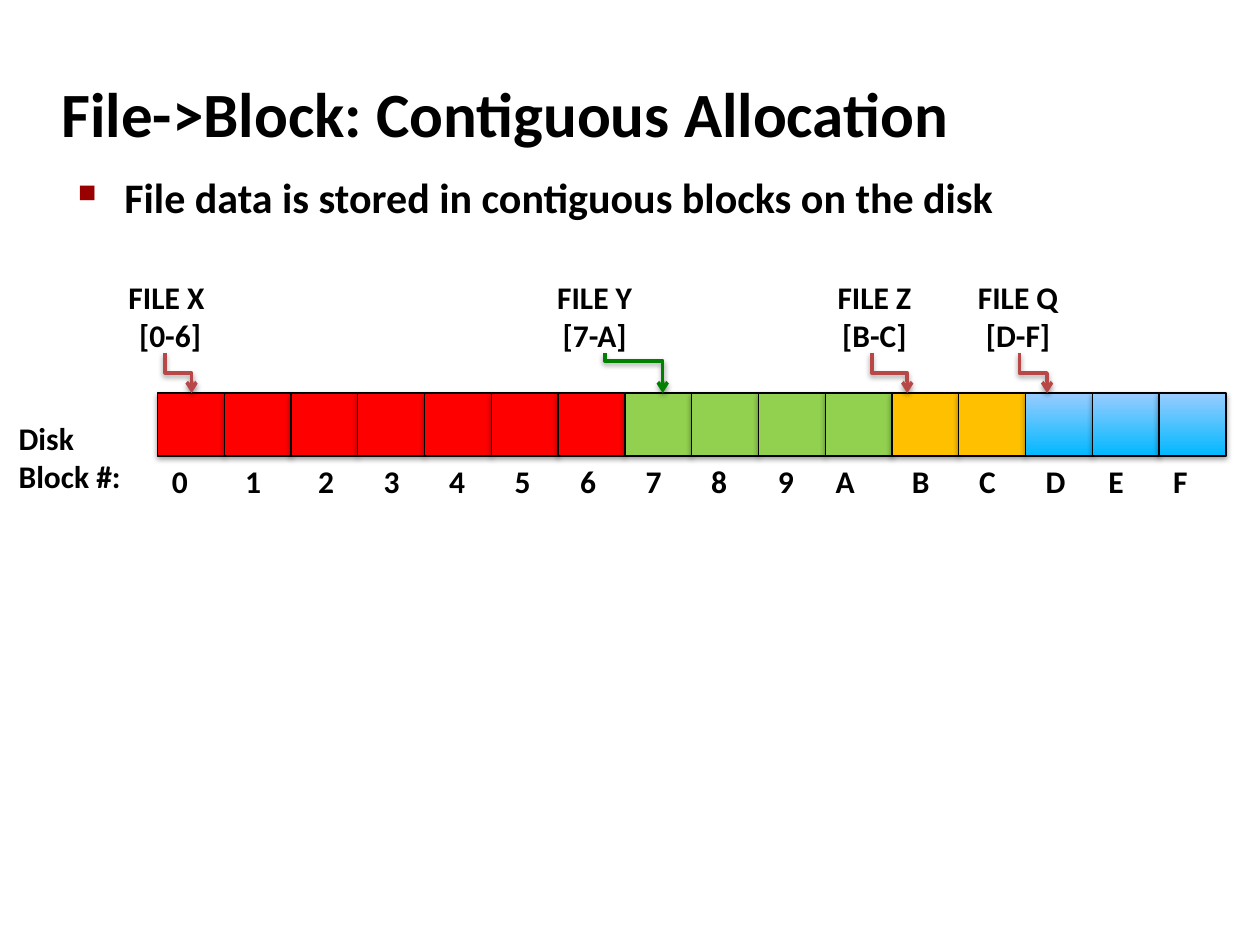
"""Build a slide that shows contiguous file allocation on disk blocks."""
from dataclasses import dataclass

from lxml.etree import SubElement
from pptx import Presentation
from pptx.dml.color import RGBColor as Color
from pptx.enum.shapes import MSO_CONNECTOR as Connector, MSO_SHAPE as Shape
from pptx.enum.text import MSO_ANCHOR as Anchor, PP_ALIGN as Align
from pptx.oxml.ns import qn
from pptx.util import Inches, Pt


@dataclass(frozen=True)
class Theme:
    font: str = "Calibri"
    title_size: float = 36
    body_size: float = 24
    label_size: float = 18
    ink: str = "000000"
    bullet: str = "990000"
    red_arrow: str = "B84747"
    green_arrow: str = "008000"
    red: str = "FF0000"
    green: str = "92D050"
    amber: str = "FFC000"
    blue: tuple[str, str] = ("00B8FF", "99CCFF")


@dataclass(frozen=True)
class Area:
    left: float
    top: float
    width: float
    height: float


@dataclass(frozen=True)
class DiskFile:
    lines: tuple[str, str]
    blocks: int
    fill: str | tuple[str, str]
    label_center: float
    arrow_start: float
    arrow_end: float
    arrow_color: str
    bend: float = 0.5


THEME = Theme()
ROW = Area(1.25, 3.12, 0.53, 0.5)
LABEL_TOP, LABEL_WIDTH, LABEL_HEIGHT = 2.16, 1.1, 0.7
ARROW_TOP = 2.8
NUMBERS = Area(1.16, 3.62, 8.47, 0.37)
NUMBER_CENTERS = (1.43, 2.01, 2.59, 3.11, 3.63, 4.15, 4.67, 5.19,
                  5.71, 6.24, 6.71, 7.31, 7.84, 8.38, 8.86, 9.37)
INSET = 0.1
FILES = (
    DiskFile(("FILE X ", "[0-6]"), 7, THEME.red, 1.35, 1.31, 1.52, THEME.red_arrow),
    DiskFile(("FILE Y", "[7-A]"), 4, THEME.green, 4.72, 4.8, 5.26, THEME.green_arrow, 0.2),
    DiskFile(("FILE Z", "[B-C]"), 2, THEME.amber, 6.94, 6.92, 7.2, THEME.red_arrow),
    DiskFile(("FILE Q", "[D-F]"), 3, THEME.blue, 8.08, 8.09, 8.31, THEME.red_arrow),
)


def add_node(parent, tag: str, **values):
    """Append an XML element with the given attributes."""
    return SubElement(parent, qn(tag), {key: str(value) for key, value in values.items()})


def add_shadow(effects) -> None:
    """Put a soft downward shadow in an effect list."""
    shadow = add_node(effects, "a:outerShdw", blurRad=40000, dist=20000,
                      dir=5400000, rotWithShape=0)
    color = add_node(shadow, "a:srgbClr", val=THEME.ink)
    add_node(color, "a:alpha", val=38000)


def add_text(slide, area: Area, lines: tuple[str, ...], size: float,
             align=Align.LEFT, wrap: bool = False):
    """Add a box of bold text with one paragraph per line."""
    box = slide.shapes.add_textbox(*map(Inches, (area.left, area.top, area.width, area.height)))
    frame = box.text_frame
    frame.word_wrap = wrap
    for index, line in enumerate(lines):
        para = frame.add_paragraph() if index else frame.paragraphs[0]
        para.alignment = align
        span = para.add_run()
        span.text = line
        formats = {"name": THEME.font, "size": Pt(size), "bold": True}
        for name, value in formats.items():
            setattr(span.font, name, value)
        span.font.color.rgb = Color.from_string(THEME.ink)
    return frame


def set_indent(para, left: float, first: float):
    """Set a paragraph's left margin and first-line indent."""
    properties = para._p.get_or_add_pPr()
    properties.set("marL", str(Inches(left)))
    properties.set("indent", str(Inches(first)))
    return properties


def add_heading(slide) -> None:
    """Add the title and the bulleted statement."""
    title = add_text(slide, Area(0.39, 0.48, 8.3, 0.83),
                     ("File->Block: Contiguous Allocation",), THEME.title_size, wrap=True)
    title.vertical_anchor = Anchor.MIDDLE
    set_indent(title.paragraphs[0], 0.13, -0.13)

    body = add_text(slide, Area(0.51, 1.31, 8.64, 0.56),
                    ("File data is stored in contiguous blocks on the disk",),
                    THEME.body_size, wrap=True)
    para = body.paragraphs[0]
    para.space_before = Pt(4.8)
    properties = set_indent(para, 0.38, -0.37)
    add_node(add_node(properties, "a:buClr"), "a:srgbClr", val=THEME.bullet)
    add_node(properties, "a:buSzPct", val=60000)
    add_node(properties, "a:buChar", char="■")


def add_block(slide, index: int, fill: str | tuple[str, str]) -> None:
    """Add one disk block at its place in the row."""
    left = ROW.left + index * ROW.width
    block = slide.shapes.add_shape(
        Shape.RECTANGLE, *map(Inches, (left, ROW.top, ROW.width, ROW.height)))
    if isinstance(fill, str):
        block.fill.solid()
        block.fill.fore_color.rgb = Color.from_string(fill)
    else:
        block.fill.gradient()
        block.fill.gradient_angle = 90
        for stop, color in zip(block.fill.gradient_stops, fill):
            stop.color.rgb = Color.from_string(color)
    block.line.color.rgb = Color.from_string(THEME.ink)
    block.line.width = Pt(0.75)
    block.shadow.inherit = False
    add_shadow(block._element.spPr.find(qn("a:effectLst")))


def add_arrow(slide, file: DiskFile) -> None:
    """Add an elbow arrow that leaves a label downward, as a quarter-turned connector."""
    middle_x = (file.arrow_start + file.arrow_end) / 2
    middle_y = (ARROW_TOP + ROW.top) / 2
    half_width = (ROW.top - ARROW_TOP) / 2
    half_height = (file.arrow_end - file.arrow_start) / 2
    arrow = slide.shapes.add_connector(
        Connector.ELBOW, *map(Inches, (middle_x + half_width, middle_y - half_height,
                                       middle_x - half_width, middle_y + half_height)))
    properties = arrow._element.spPr
    properties.find(qn("a:xfrm")).set("rot", str(270 * 60000))
    guides = properties.find(qn("a:prstGeom")).find(qn("a:avLst"))
    add_node(guides, "a:gd", name="adj1", fmla=f"val {round(file.bend * 100000)}")
    arrow.line.color.rgb = Color.from_string(file.arrow_color)
    arrow.line.width = Pt(2)
    add_node(properties.find(qn("a:ln")), "a:tailEnd", type="arrow")
    add_shadow(add_node(properties, "a:effectLst"))


def add_numbers(slide) -> None:
    """Add the row of block numbers on centred tab stops."""
    frame = add_text(slide, NUMBERS, ("".join(f"\t{digit}" for digit in "0123456789ABCDEF"),),
                     THEME.label_size, wrap=True)
    tabs = add_node(frame.paragraphs[0]._p.get_or_add_pPr(), "a:tabLst")
    for center in NUMBER_CENTERS:
        add_node(tabs, "a:tab", pos=Inches(center - NUMBERS.left - INSET), algn="ctr")


def main() -> None:
    """Build and save the deck."""
    deck = Presentation()
    deck.slide_width, deck.slide_height = Inches(10), Inches(7.5)
    slide = deck.slides.add_slide(deck.slide_layouts[6])
    add_heading(slide)
    fills = [file.fill for file in FILES for _ in range(file.blocks)]
    for index, fill in enumerate(fills):
        add_block(slide, index, fill)
    for file in FILES:
        left = file.label_center - LABEL_WIDTH / 2
        add_text(slide, Area(left, LABEL_TOP, LABEL_WIDTH, LABEL_HEIGHT),
                 file.lines, THEME.label_size, Align.CENTER)
        add_arrow(slide, file)
    add_text(slide, Area(0.05, 3.28, 1.1, 0.72), ("Disk", "Block #:"), THEME.label_size)
    add_numbers(slide)
    deck.save("out.pptx")


if __name__ == "__main__":
    main()
